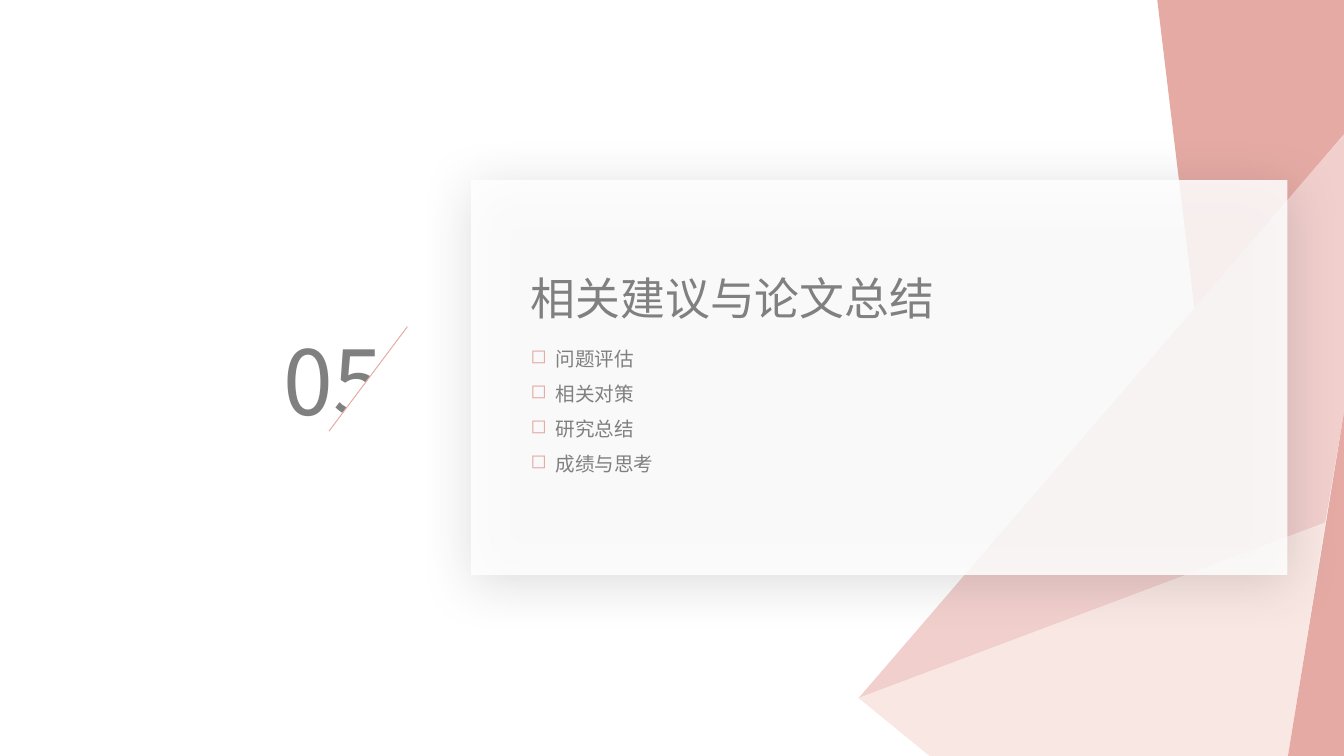
from lxml.etree import SubElement
from pptx import Presentation
from pptx.dml.color import RGBColor
from pptx.enum.shapes import MSO_CONNECTOR, MSO_SHAPE
from pptx.enum.text import MSO_ANCHOR, MSO_AUTO_SIZE, PP_ALIGN
from pptx.oxml.ns import qn
from pptx.util import Pt

HUES = {"rose": "E5AAA4", "pink": "F1CFCD", "cream": "F9E7E3",
        "white": "FFFFFF", "gray": "808080", "shade": "333333"}
FONT = "Noto Sans CJK SC"


def paint(shape, hue):
    shape.fill.solid()
    shape.fill.fore_color.rgb = RGBColor.from_string(HUES[hue])
    shape.line.fill.background()
    shape.shadow.inherit = False


def write(para, text, size, lead):
    para.alignment = PP_ALIGN.LEFT
    para.line_spacing = Pt(lead)
    para.space_before = Pt(0)
    run = para.add_run()
    run.text = text
    run.font.size = Pt(size)
    run.font.name = FONT
    run.font.color.rgb = RGBColor.from_string(HUES["gray"])
    SubElement(run.font._element, qn("a:ea"), typeface=FONT)


deck = Presentation()
deck.slide_width, deck.slide_height = Pt(720), Pt(405)
slide = deck.slides.add_slide(deck.slide_layouts[5])
shapes = slide.shapes

# Faceted backdrop on the right
facets = [
    ("rose", [(639.5, 165.5), (620, 0), (720, 0), (720, 72.5)]),
    ("pink", [(459.5, 374.5), (710, 280.5), (720, 221), (720, 72.5)]),
    ("cream", [(459.5, 374.5), (497.5, 405), (690, 405), (710, 280.5)]),
    ("rose", [(690, 405), (720, 405), (720, 221)]),
]
for hue, points in facets:
    pen = shapes.build_freeform(*points[0], scale=Pt(1))
    pen.add_line_segments(points[1:], close=True)
    paint(pen.convert_to_shape(), hue)

# Translucent card with a soft shadow
card = shapes.add_shape(MSO_SHAPE.RECTANGLE, Pt(252.25), Pt(96.5), Pt(437.5), Pt(211.5))
paint(card, "white")
tint = card._element.spPr.find(qn("a:solidFill"))[0]
SubElement(tint, qn("a:alpha"), val="85000")
glow = SubElement(card._element.spPr.find(qn("a:effectLst")), qn("a:outerShdw"),
                  blurRad=str(Pt(29)), dist=str(Pt(5)), dir=str(77 * 60000),
                  algn="ctr", rotWithShape="0")
dark = SubElement(glow, qn("a:srgbClr"), val=HUES["shade"])
SubElement(dark, qn("a:alpha"), val="20000")

# Section number, cut by a white corner and a slanted line
label = shapes.add_textbox(Pt(144.75), Pt(167.75), Pt(70.5), Pt(65.5))
label.text_frame.word_wrap = True
write(label.text_frame.paragraphs[0], "05", 48, 61)

corner = shapes.add_shape(MSO_SHAPE.RIGHT_TRIANGLE, Pt(169.25), Pt(182), Pt(56), Pt(42))
corner.rotation = 270
paint(corner, "white")

slash = shapes.add_connector(MSO_CONNECTOR.STRAIGHT, Pt(218.25), Pt(175), Pt(176.25), Pt(231))
slash.line.color.rgb = RGBColor.from_string(HUES["rose"])
slash.line.width = Pt(0.5)
SubElement(slash._element.spPr, qn("a:effectLst"))

# Title, raised above the card
title = shapes.title
title.left, title.top, title.width, title.height = Pt(277.25), Pt(138.25), Pt(232.5), Pt(36)
frame = title.text_frame
frame.word_wrap = False
frame.auto_size = MSO_AUTO_SIZE.NONE
frame.vertical_anchor = MSO_ANCHOR.TOP
write(frame.paragraphs[0], "相关建议与论文总结", 24, 32)
shapes._spTree.append(title._element)

# Bulleted topics
topics = ["问题评估", "相关对策", "研究总结", "成绩与思考"]
box = shapes.add_textbox(Pt(277.25), Pt(176), Pt(180), Pt(82))
frame = box.text_frame
frame.word_wrap = True
for i, topic in enumerate(topics):
    para = frame.add_paragraph() if i else frame.paragraphs[0]
    write(para, topic, 10.5, 18.75)
    props = para._p.get_or_add_pPr()
    props.set("marL", str(Pt(13.5)))
    props.set("indent", str(Pt(-13.5)))
    SubElement(SubElement(props, qn("a:buClr")), qn("a:srgbClr"), val=HUES["rose"])
    SubElement(props, qn("a:buChar"), char="◻")

deck.save("out.pptx")
